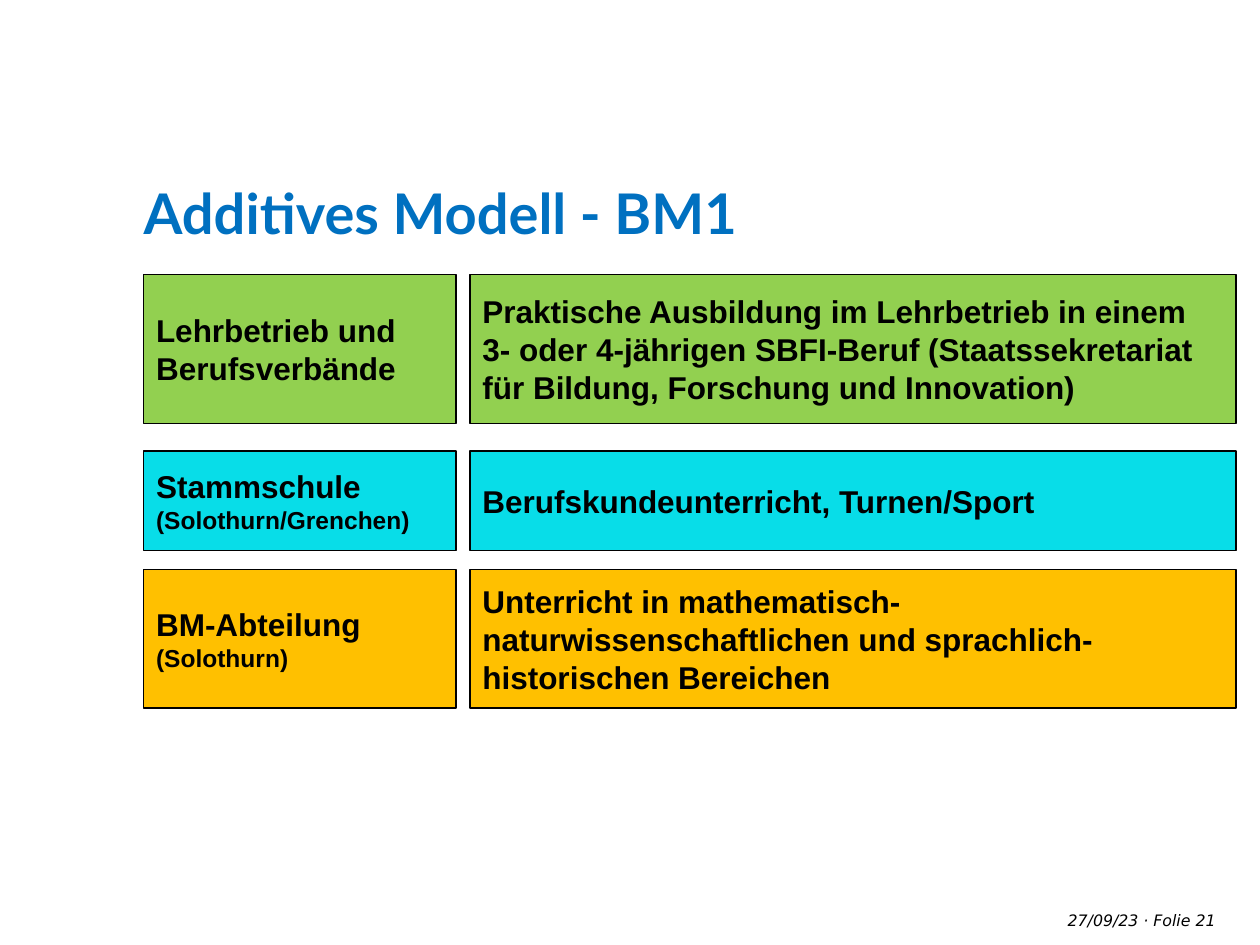
import dataclasses
import pptx
import pptx.util
import pptx.dml.color
import pptx.enum.shapes
import pptx.enum.text

Inch = pptx.util.Inches
Align = pptx.enum.text.PP_ALIGN
Anchor = pptx.enum.text.MSO_ANCHOR


@dataclasses.dataclass(frozen=True)
class Theme:
    """Hold the colours, fonts and type sizes."""
    ink: str = "000000"
    blue: str = "0070C0"
    green: str = "92D050"
    cyan: str = "08DDE8"
    gold: str = "FFC000"
    head: str = "Lato"
    body: str = "Arial"
    foot: str = "DejaVu Sans"
    title: int = 32
    text: int = 18
    small: int = 14
    note: int = 9
    line: float = 0.75


THEME = Theme()
WIDTH, HEIGHT = 10, 7.5
LEFT, RIGHT = 1.14, 9.81
COLS = ((LEFT, 2.48), (3.73, RIGHT - 3.73))
ROWS = (
    (2.18, 1.18, THEME.green, "Lehrbetrieb und Berufsverbände",
     "Praktische Ausbildung im Lehrbetrieb in einem\n"
     "3- oder 4-jährigen SBFI-Beruf (Staatssekretariat "
     "für Bildung, Forschung und Innovation)"),
    (3.58, 0.79, THEME.cyan, "Stammschule\v(Solothurn/Grenchen)",
     "Berufskundeunterricht, Turnen/Sport"),
    (4.52, 1.1, THEME.gold, "BM-Abteilung \v(Solothurn)",
     "Unterricht in mathematisch-naturwissenschaftlichen "
     "und sprachlich-historischen Bereichen"),
)


def tint(code):
    """Turn a hex code into a colour."""
    return pptx.dml.color.RGBColor.from_string(code)


def style(font, face, size, code, bold=False, slant=False):
    """Set the look of a font."""
    font.name, font.size = face, pptx.util.Pt(size)
    font.bold, font.italic = bold, slant
    font.color.rgb = tint(code)


def label(slide, box, text, align, **look):
    """Place one line of plain text without insets."""
    frame = slide.shapes.add_textbox(*map(Inch, box)).text_frame
    frame.word_wrap = True
    frame.margin_left = frame.margin_right = 0
    frame.margin_top = frame.margin_bottom = 0
    frame.text = text
    para = frame.paragraphs[0]
    para.alignment = align
    style(para.runs[0].font, **look)


def panel(slide, box, fill, text):
    """Place a filled box; a run after a line break is small."""
    kind = pptx.enum.shapes.MSO_SHAPE.RECTANGLE
    shape = slide.shapes.add_shape(kind, *map(Inch, box))
    shape.shadow.inherit = False
    shape.fill.solid()
    shape.fill.fore_color.rgb = tint(fill)
    shape.line.color.rgb = tint(THEME.ink)
    shape.line.width = pptx.util.Pt(THEME.line)
    frame = shape.text_frame
    frame.word_wrap = True
    frame.vertical_anchor = Anchor.MIDDLE
    frame.text = text
    for para in frame.paragraphs:
        para.alignment = Align.LEFT
        for run, size in zip(para.runs, (THEME.text, THEME.small)):
            style(run.font, THEME.body, size, THEME.ink, bold=True)


def grid(slide, cols, rows):
    """Fill each row with its name and its content."""
    for top, high, fill, *texts in rows:
        for (left, wide), text in zip(cols, texts):
            panel(slide, (left, top, wide, high), fill, text)


def footer(slide, box):
    """Place the date and the slide number side by side."""
    left, top, wide, high = box
    look = dict(face=THEME.foot, size=THEME.note, code=THEME.ink, slant=True)
    date, gap = wide * 0.66, 0.04
    label(slide, (left, top, date, high), "27/09/23", Align.RIGHT, **look)
    label(slide, (left + date + gap, top, wide - date - gap, high),
          "· Folie 21", Align.LEFT, **look)


def main():
    """Build and save the deck."""
    deck = pptx.Presentation()
    deck.slide_width, deck.slide_height = Inch(WIDTH), Inch(HEIGHT)
    slide = deck.slides.add_slide(deck.slide_layouts[6])
    footer(slide, (7.49, 7.23, 2.34, 0.2))
    label(slide, (LEFT, 1.42, RIGHT - LEFT, 0.55), "Additives Modell - BM1",
          Align.LEFT, face=THEME.head, size=THEME.title, code=THEME.blue,
          bold=True)
    grid(slide, COLS, ROWS)
    deck.save("out.pptx")


if __name__ == "__main__":
    main()
